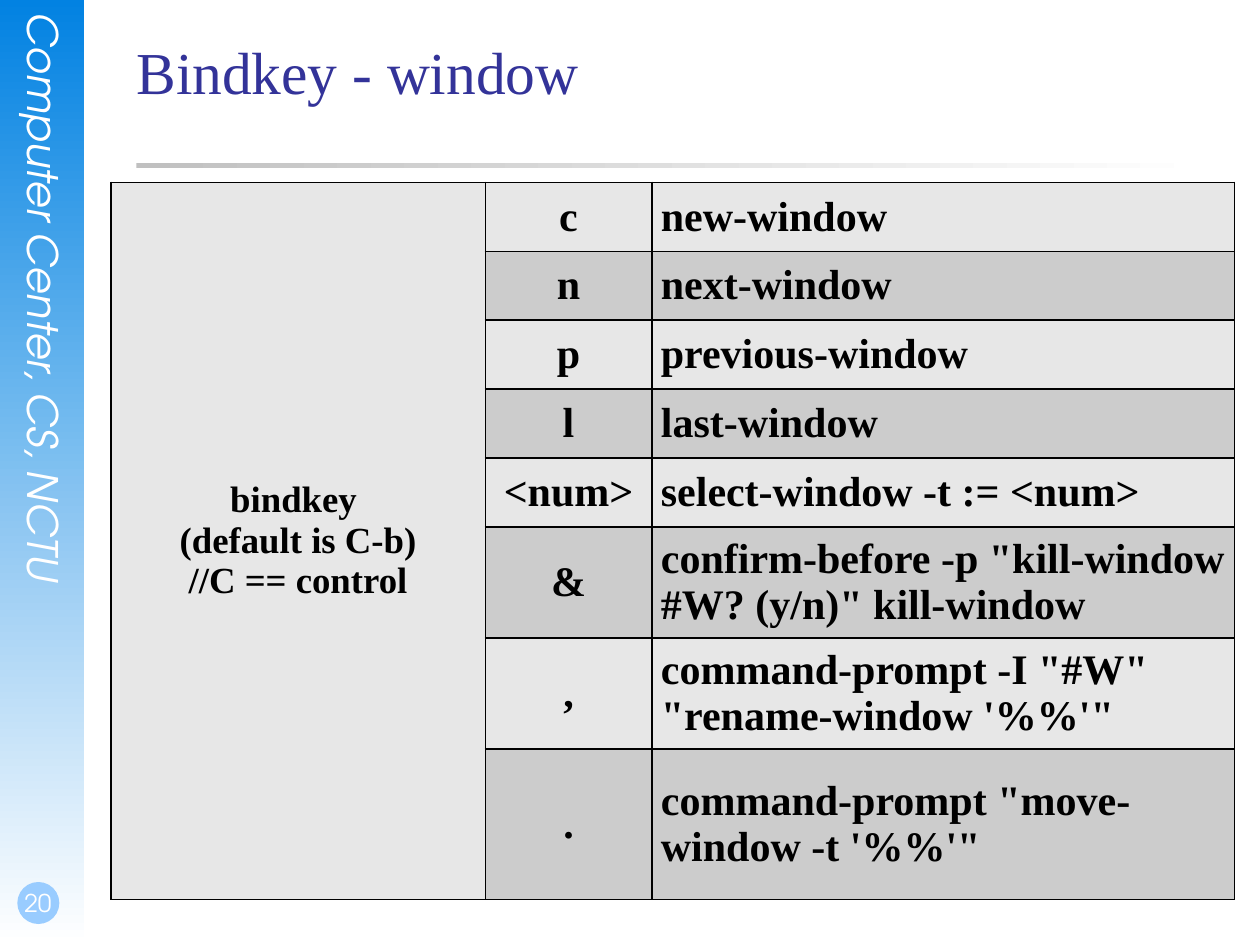
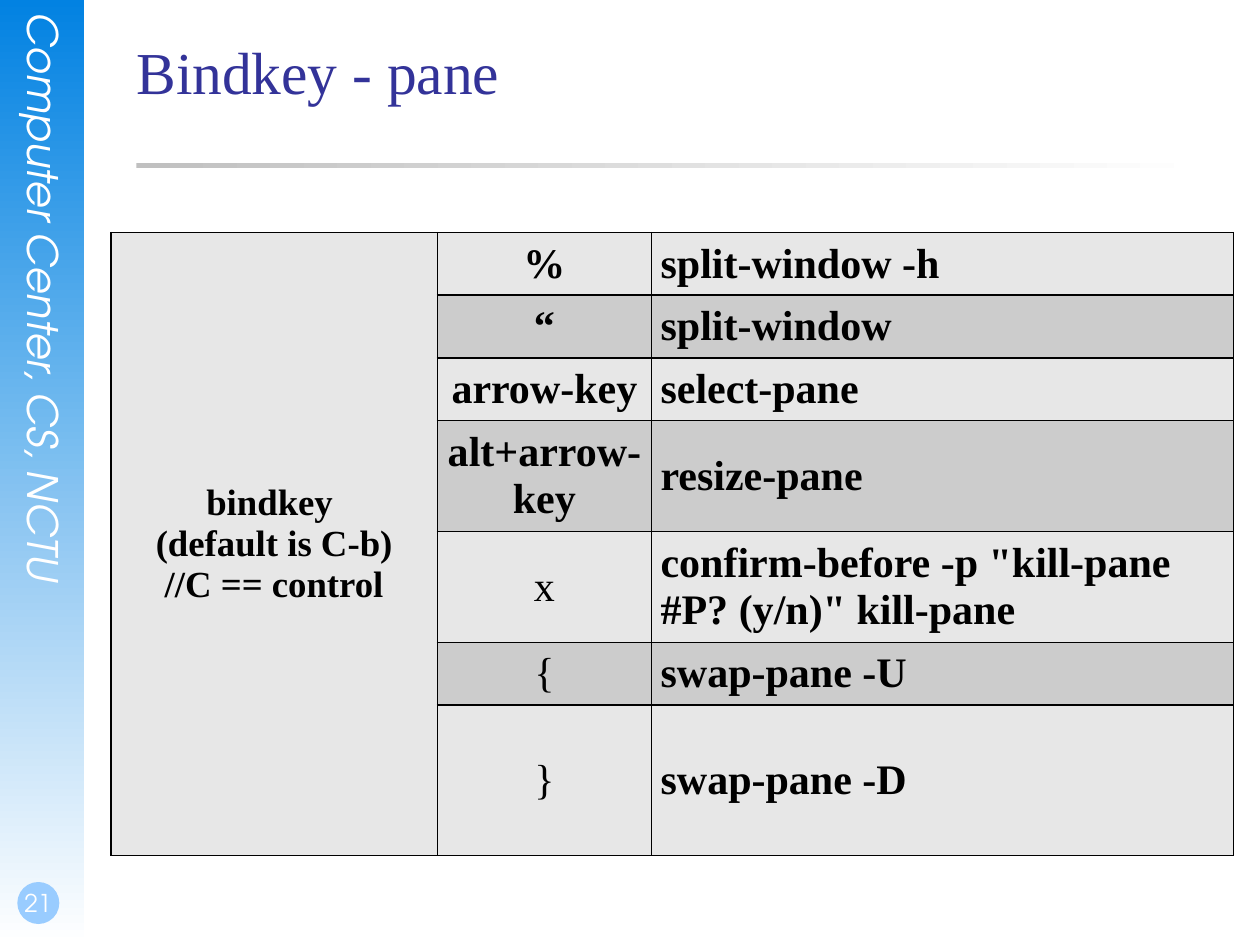
from dataclasses import dataclass

from lxml import etree
from pptx import Presentation
from pptx.dml.color import RGBColor
from pptx.enum.shapes import MSO_SHAPE
from pptx.enum.text import MSO_ANCHOR, MSO_AUTO_SIZE, PP_ALIGN
from pptx.oxml.ns import qn
from pptx.util import Pt

RECT, OVAL = MSO_SHAPE.RECTANGLE, MSO_SHAPE.OVAL
LEFT, CENTER = PP_ALIGN.LEFT, PP_ALIGN.CENTER
TOP, MIDDLE, BOTTOM = MSO_ANCHOR.TOP, MSO_ANCHOR.MIDDLE, MSO_ANCHOR.BOTTOM
FIT_SHAPE = MSO_AUTO_SIZE.SHAPE_TO_FIT_TEXT

WHITE = RGBColor(0xFF, 0xFF, 0xFF)
BLACK = RGBColor(0x00, 0x00, 0x00)
BAND_BLUE = RGBColor(0x02, 0x82, 0xE2)
BADGE_BLUE = RGBColor(0x99, 0xCC, 0xFF)
TITLE_BLUE = RGBColor(0x33, 0x33, 0x99)
RULE_GRAY = RGBColor(0xC0, 0xC0, 0xC0)
ROW_FILLS = (RGBColor(0xE7, 0xE7, 0xE7), RGBColor(0xCC, 0xCC, 0xCC))

SANS, SERIF = "TeX Gyre Adventor", "Times New Roman"
BAND_FONT = {"name": SANS, "size": Pt(24), "italic": True}
NUMBER_FONT = {"name": SANS, "size": Pt(14)}
TITLE_FONT = {"name": SERIF, "size": Pt(34)}
PREFIX_FONT = {"name": SERIF, "size": Pt(21), "bold": True}
CELL_FONT = {"name": SERIF, "size": Pt(24), "bold": True}
KEY_FONT_PLAIN = CELL_FONT | {"bold": False}

PREFIX_LINES = ("bindkey ", "(default is C-b)", "//C == control")
CELL_FORMAT = {
    "vertical_anchor": MIDDLE,
    "margin_left": Pt(5.2),
    "margin_right": Pt(5.2),
    "margin_top": Pt(2.9),
    "margin_bottom": Pt(2.9),
}


@dataclass(frozen=True)
class Box:
    left: float
    top: float
    width: float
    height: float

    def lengths(self) -> tuple:
        return Pt(self.left), Pt(self.top), Pt(self.width), Pt(self.height)


@dataclass(frozen=True)
class Binding:
    key: str
    command: str
    height: float
    bold_key: bool = True


@dataclass(frozen=True)
class BindingSlide:
    number: int
    title: str
    table_top: float
    columns: tuple[float, ...]
    bindings: tuple[Binding, ...]


TABLE_LEFT = 63.4
SLIDES = (
    BindingSlide(20, "Bindkey - window", 104.2, (213.9, 95.2, 333.1), (
        Binding("c", "new-window", 39.4),
        Binding("n", "next-window", 39.4),
        Binding("p", "previous-window", 39.4),
        Binding("l", "last-window", 39.4),
        Binding("<num>", "select-window -t := <num>", 39.4),
        Binding("&", 'confirm-before -p "kill-window #W? (y/n)" kill-window', 60.7),
        Binding(",", "command-prompt -I \"#W\" \"rename-window '%%'\"", 60.7),
        Binding(".", "command-prompt \"move-window -t '%%'\"", 86),
    )),
    BindingSlide(21, "Bindkey - pane", 132.9, (186.5, 122.4, 332.6), (
        Binding("%", "split-window -h", 35.8),
        Binding("“", "split-window", 35.8),
        Binding("arrow-key", "select-pane", 35.8),
        Binding("alt+arrow-key", "resize-pane", 58.5),
        Binding("x", 'confirm-before -p "kill-pane #P? (y/n)" kill-pane', 58.5, False),
        Binding("{", "swap-pane -U", 35.8, False),
        Binding("}", "swap-pane -D", 86, False),
    )),
)


def set_attrs(target, values: dict) -> None:
    for name, value in values.items():
        setattr(target, name, value)


def write_lines(tf, lines: tuple[str, ...], font: dict, color: RGBColor,
                align=LEFT) -> None:
    for i, line in enumerate(lines):
        p = tf.paragraphs[0] if i == 0 else tf.add_paragraph()
        p.alignment = align
        r = p.add_run()
        r.text = line
        set_attrs(r.font, font)
        r.font.color.rgb = color


def add_plain_shape(s, kind, box: Box):
    sp = s.shapes.add_shape(kind, *box.lengths())
    sp.shadow.inherit = False
    sp.line.fill.background()
    return sp


def add_gradient_bar(s, box: Box, start: RGBColor, angle: int) -> None:
    fill = add_plain_shape(s, RECT, box).fill
    fill.gradient()
    fill.gradient_angle = angle
    for stop, color in zip(fill.gradient_stops, (start, WHITE)):
        stop.color.rgb = color


def add_label(s, box: Box, text: str, font: dict, color: RGBColor,
              align=LEFT, anchor=TOP, margins=(0, 0, 0, 0)):
    tf = s.shapes.add_textbox(*box.lengths()).text_frame
    sides = ("margin_left", "margin_top", "margin_right", "margin_bottom")
    set_attrs(tf, dict(zip(sides, map(Pt, margins))))
    set_attrs(tf, {"word_wrap": True, "vertical_anchor": anchor})
    write_lines(tf, (text,), font, color, align)
    return tf


def add_frame(s, title: str, number: int) -> None:
    add_gradient_bar(s, Box(0, 0, 48, 540), BAND_BLUE, 270)
    tf = add_label(s, Box(10.8, 7.2, 28.8, 368), "Computer Center, CS, NCTU",
                   BAND_FONT, WHITE)
    tf.auto_size = FIT_SHAPE
    tf._txBody.bodyPr.set("vert", "eaVert")
    badge = add_plain_shape(s, OVAL, Box(9.9, 504, 24, 24))
    badge.fill.solid()
    badge.fill.fore_color.rgb = BADGE_BLUE
    add_label(s, Box(0, 492, 42, 36), str(number), NUMBER_FONT, WHITE,
              CENTER, BOTTOM, (1.4, 0, 0, 3.6))
    add_gradient_bar(s, Box(78, 93, 612, 3), RULE_GRAY, 0)
    add_label(s, Box(78, 20, 612, 90), title, TITLE_FONT, TITLE_BLUE)


def style_cell(cell, fill: RGBColor) -> None:
    set_attrs(cell, CELL_FORMAT)
    tc_pr = cell._tc.get_or_add_tcPr()
    for side in ("a:lnL", "a:lnR", "a:lnT", "a:lnB"):
        ln = etree.SubElement(tc_pr, qn(side), w=str(Pt(1)))
        solid = etree.SubElement(ln, qn("a:solidFill"))
        etree.SubElement(solid, qn("a:srgbClr"), val=str(BLACK))
    cell.fill.solid()
    cell.fill.fore_color.rgb = fill


def add_binding_table(s, page: BindingSlide) -> None:
    bindings = page.bindings
    box = Box(TABLE_LEFT, page.table_top, sum(page.columns),
              sum(b.height for b in bindings))
    table = s.shapes.add_table(len(bindings), len(page.columns), *box.lengths()).table
    set_attrs(table, {"first_row": False, "horz_banding": False})
    for column, width in zip(table.columns, page.columns):
        column.width = Pt(width)
    for i, binding in enumerate(bindings):
        table.rows[i].height = Pt(binding.height)
        prefix, key, command = (table.cell(i, j) for j in range(3))
        style_cell(prefix, ROW_FILLS[0])
        for cell in (key, command):
            style_cell(cell, ROW_FILLS[i % 2])
        key_font = CELL_FONT if binding.bold_key else KEY_FONT_PLAIN
        write_lines(key.text_frame, (binding.key,), key_font, BLACK, CENTER)
        write_lines(command.text_frame, (binding.command,), CELL_FONT, BLACK)
    first = table.cell(0, 0)
    first.merge(table.cell(len(bindings) - 1, 0))
    write_lines(first.text_frame, PREFIX_LINES, PREFIX_FONT, BLACK, CENTER)


def main() -> None:
    prs = Presentation()
    set_attrs(prs, {"slide_width": Pt(720), "slide_height": Pt(540)})
    for page in SLIDES:
        s = prs.slides.add_slide(prs.slide_layouts[6])
        add_frame(s, page.title, page.number)
        add_binding_table(s, page)
    prs.save("out.pptx")


if __name__ == "__main__":
    main()
